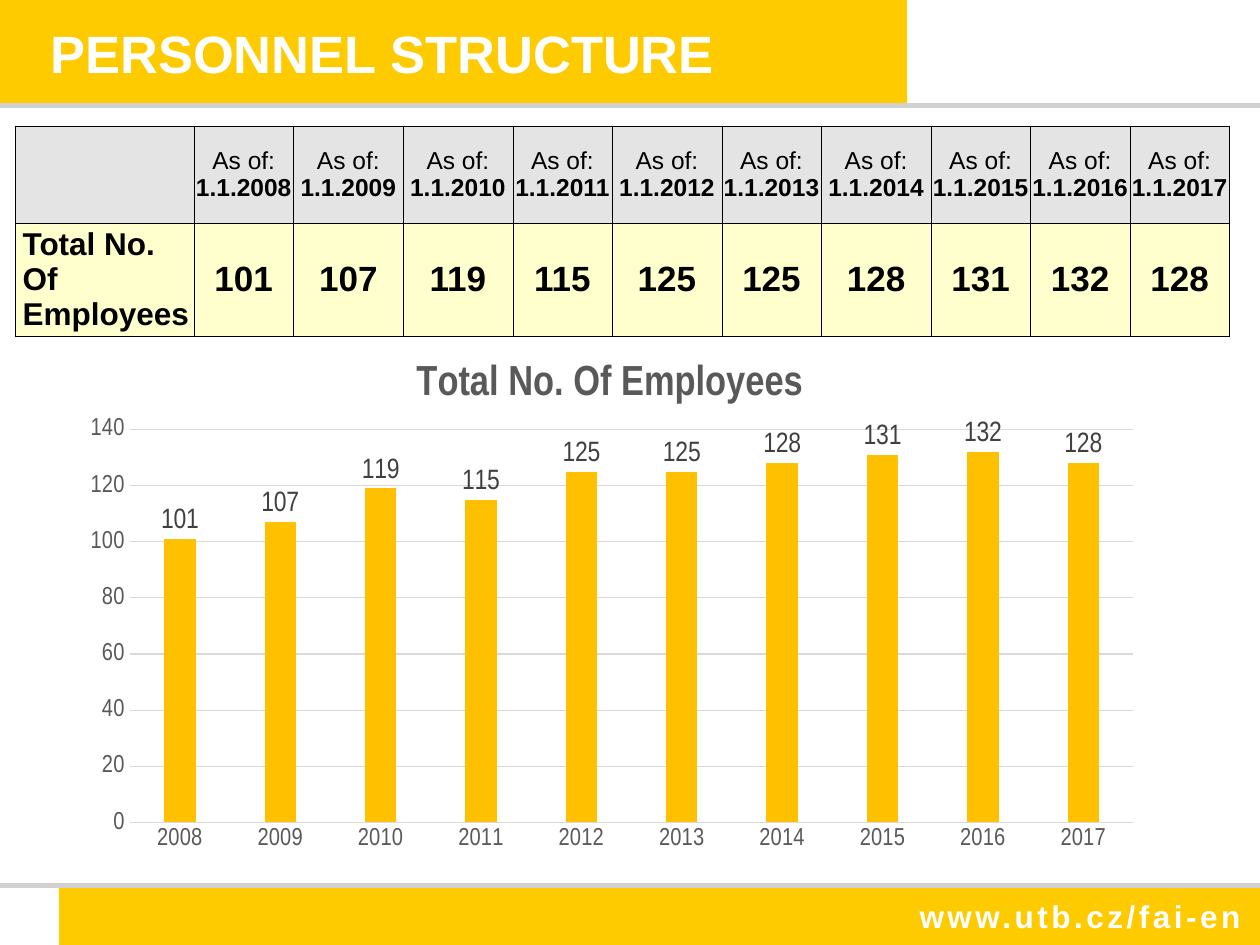
from lxml.etree import SubElement
from pptx import Presentation
from pptx.chart.data import CategoryChartData
from pptx.dml.color import RGBColor
from pptx.enum.chart import XL_CHART_TYPE, XL_LABEL_POSITION, XL_TICK_MARK
from pptx.enum.shapes import MSO_CONNECTOR, MSO_SHAPE
from pptx.enum.text import MSO_ANCHOR, PP_ALIGN
from pptx.oxml import parse_xml
from pptx.oxml.ns import nsdecls, qn
from pptx.util import Inches, Pt


def style(font, size, color, bold=False, name="Arial"):
    font.name = name
    font.size = Pt(size)
    font.bold = bold
    font.color.rgb = RGBColor.from_string(color)


YELLOW, RULE_GRAY, WHITE, BLACK = "FECB00", "D0D0CE", "FFFFFF", "000000"
AXIS_TEXT, GRID = "595959", "D9D9D9"
years = range(2008, 2018)
employees = [101, 107, 119, 115, 125, 125, 128, 131, 132, 128]

deck = Presentation()
deck.slide_width, deck.slide_height = Inches(10), Inches(7.5)
page = deck.slides.add_slide(deck.slide_layouts[5])

# Header and footer bands, then their rules
bands = [(0, 0, 7.2, 0.84), (0.47, 7.04, 9.53, 0.47)]
for bounds in bands:
    band = page.shapes.add_shape(MSO_SHAPE.RECTANGLE, *map(Inches, bounds))
    band.shadow.inherit = False
    band.fill.solid()
    band.fill.fore_color.rgb = RGBColor.from_string(YELLOW)
    band.line.fill.background()

for y in (0.84, 7.03):
    rule = page.shapes.add_connector(
        MSO_CONNECTOR.STRAIGHT, 0, Inches(y), Inches(10), Inches(y))
    rule.line.color.rgb = RGBColor.from_string(RULE_GRAY)
    rule.line.width = Pt(3)
    SubElement(rule._element.spPr, qn("a:effectLst"))

footer = page.shapes.add_textbox(Inches(7.2), Inches(7.07), Inches(2.8), Inches(0.4))
footer.text_frame.text = "www.utb.cz/fai-en"
span = footer.text_frame.paragraphs[0].runs[0]
style(span.font, 18, WHITE, bold=True)
span.font._element.set("spc", "200")

# Title, brought in front of the header band
title = page.shapes.title
page.shapes._spTree.append(title._element)
title.left, title.top, title.width, title.height = map(Inches, (0, 0, 7.19, 0.84))
title.text_frame.text = "PERSONNEL STRUCTURE"
title.text_frame.margin_left = Inches(0.4)
title.text_frame.vertical_anchor = MSO_ANCHOR.MIDDLE
para = title.text_frame.paragraphs[0]
para.alignment = PP_ALIGN.LEFT
style(para.runs[0].font, 30, WHITE, bold=True)

# Table
column_widths = [1.42, 0.79, 0.87, 0.87, 0.79, 0.87, 0.79, 0.87, 0.79, 0.79, 0.79]
table = page.shapes.add_table(
    2, len(column_widths), Inches(0.12), Inches(1), Inches(9.61), Inches(1.67)).table
table.first_row = table.horz_banding = False
for column, width in zip(table.columns, column_widths):
    column.width = Inches(width)
for row, height in zip(table.rows, (0.77, 0.9)):
    row.height = Inches(height)

headings = [""] + [f"As of:\n1.1.{year}" for year in years]
totals = ["Total No. Of Employees"] + [str(count) for count in employees]
for r, (texts, fill) in enumerate([(headings, "E4E4E4"), (totals, "FFFFCD")]):
    for c, text in enumerate(texts):
        cell = table.cell(r, c)
        cell.text_frame.text = text
        cell.vertical_anchor = MSO_ANCHOR.MIDDLE
        cell.margin_left = Inches(0 if c else 0.06)
        cell.margin_right = cell.margin_top = cell.margin_bottom = 0
        size = 14 if r == 0 else 20 if c else 18
        for para in cell.text_frame.paragraphs:
            para.alignment = PP_ALIGN.CENTER if c else PP_ALIGN.LEFT
            for span in para.runs:
                style(span.font, size, BLACK, bold=span.text != "As of:")
        for side in ("lnL", "lnR", "lnT", "lnB"):
            cell._tc.get_or_add_tcPr().append(parse_xml(
                f'<a:{side} {nsdecls("a")} w="{Pt(0.25)}"><a:solidFill>'
                f'<a:srgbClr val="{BLACK}"/></a:solidFill></a:{side}>'))
        cell.fill.solid()
        cell.fill.fore_color.rgb = RGBColor.from_string(fill)

# Chart
data = CategoryChartData()
data.categories = [str(year) for year in years]
data.add_series("Total No. Of Employees", employees)
chart = page.shapes.add_chart(
    XL_CHART_TYPE.COLUMN_CLUSTERED,
    Inches(0.51), Inches(2.66), Inches(8.66), Inches(4.16), data).chart
style(chart.font, 10, BLACK, name="Arial Narrow")
chart.has_legend = False
chart.has_title = True
chart.chart_title.include_in_layout = False
chart.chart_title.text_frame.text = "Total No. Of Employees"
style(chart.chart_title.text_frame.paragraphs[0].runs[0].font,
      24, AXIS_TEXT, bold=True, name="Arial Narrow")

for axis in (chart.category_axis, chart.value_axis):
    style(axis.tick_labels.font, 14, AXIS_TEXT, name="Arial Narrow")
    axis.major_tick_mark = axis.minor_tick_mark = XL_TICK_MARK.NONE
chart.value_axis.minimum_scale = 0
chart.value_axis.maximum_scale = 140
chart.value_axis.major_unit = 20
chart.value_axis.format.line.fill.background()
for line in (chart.category_axis.format.line, chart.value_axis.major_gridlines.format.line):
    line.color.rgb = RGBColor.from_string(GRID)
    line.width = Pt(0.75)

plot = chart.plots[0]
plot.vary_by_categories = False
plot.gap_width = 219
plot.overlap = -27
plot.series[0].format.fill.solid()
plot.series[0].format.fill.fore_color.rgb = RGBColor.from_string("FFC000")
plot.has_data_labels = True
plot.data_labels.show_value = True
plot.data_labels.position = XL_LABEL_POSITION.OUTSIDE_END
style(plot.data_labels.font, 16, "404040", name="Arial Narrow")

# Fixed plot area, as fractions of the chart
plot_area = chart._chartSpace.chart.plotArea
for old_layout in plot_area.findall(qn("c:layout")):
    plot_area.remove(old_layout)
plot_area.insert(0, parse_xml(
    f'<c:layout {nsdecls("c")}><c:manualLayout><c:layoutTarget val="inner"/>'
    '<c:xMode val="edge"/><c:yMode val="edge"/><c:x val="0.06"/><c:y val="0.18"/>'
    '<c:w val="0.92"/><c:h val="0.75"/></c:manualLayout></c:layout>'))

deck.save("out.pptx")
